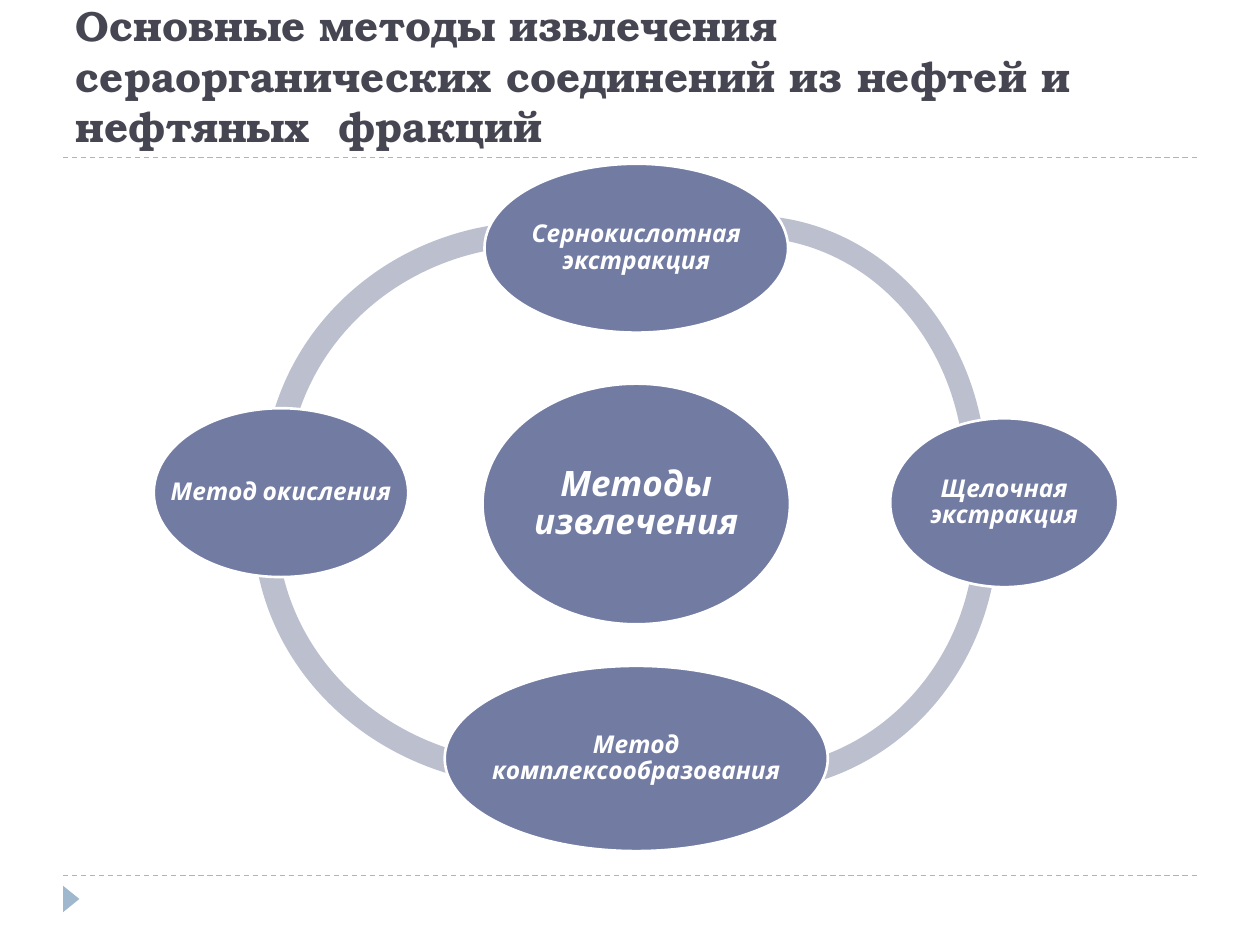
import pptx
import pptx.util
import pptx.dml.color
import pptx.enum.dml
import pptx.enum.shapes
import pptx.enum.text
import pptx.oxml

RGBColor = pptx.dml.color.RGBColor
Shape = pptx.enum.shapes.MSO_SHAPE
Anchor = pptx.enum.text.MSO_ANCHOR
Align = pptx.enum.text.PP_ALIGN

TITLE_COLOR = RGBColor(0x46, 0x46, 0x53)
NODE_COLOR = RGBColor(0x72, 0x7C, 0xA3)
RING_COLOR = RGBColor(0xBC, 0xBF, 0xCE)
ACCENT_COLOR = RGBColor(0x9F, 0xB8, 0xCD)
WHITE = RGBColor(0xFF, 0xFF, 0xFF)

COLUMNS, ROWS = 10, 7.5
TITLE = "Основные методы извлечения сераорганических соединений из нефтей и нефтяных  фракций"

# left, top, width, height in columns and rows; start and end in degrees
RING_ARCS = [
    (2.09, 1.76, 4.35, 4.15, 177.88, 293.02),
    (2.01, 2.09, 4.47, 4.15, 66.53, 187.2),
    (3.99, 2.13, 3.93, 4.15, 353.87, 116.24),
    (4.06, 1.71, 3.77, 4.15, 243.82, 5.67),
]
# text, centre column, centre row, width, height, text size
NODES = [
    ("Методы извлечения", 5.05, 4, 2.44, 1.91, 20),
    ("Сернокислотная экстракция", 5.05, 1.97, 2.41, 1.34, 14),
    ("Щелочная экстракция", 7.97, 3.99, 1.81, 1.34, 14),
    ("Метод комплексообразования", 5.05, 6.02, 3.04, 1.47, 14),
    ("Метод окисления", 2.23, 3.91, 2.02, 1.34, 14),
]


class MethodsSlide:
    """Holds the style and the slide, and draws on a grid of columns and rows."""

    title_font = "TeX Gyre Bonum"
    body_font = "Cabin"

    def __init__(self, presentation):
        self.column = presentation.slide_width / COLUMNS
        self.row = presentation.slide_height / ROWS
        self.slide = presentation.slides.add_slide(presentation.slide_layouts[5])
        self.shapes = self.slide.shapes

    def box(self, left, top, width, height):
        return (round(left * self.column), round(top * self.row),
                round(width * self.column), round(height * self.row))

    def format_text(self, paragraph, name, size, color, italic=False):
        for run in paragraph.runs:
            run.font.name = name
            run.font.size = pptx.util.Pt(size)
            run.font.bold = True
            run.font.italic = italic
            run.font.color.rgb = color

    def title(self, text, *place):
        title = self.shapes.title
        title.left, title.top, title.width, title.height = self.box(*place)
        frame = title.text_frame
        frame.text = text
        frame.word_wrap = True
        frame.auto_size = pptx.enum.text.MSO_AUTO_SIZE.NONE
        frame.vertical_anchor = Anchor.BOTTOM
        frame.paragraphs[0].alignment = Align.LEFT
        self.format_text(frame.paragraphs[0], self.title_font, 24, TITLE_COLOR)

    def rule(self, row):
        """Draw a dashed line between the side margins."""
        left, top, width, _ = self.box(0.5, row, 9, 0)
        line = self.shapes.add_connector(
            pptx.enum.shapes.MSO_CONNECTOR.STRAIGHT, left, top, left + width, top)
        line.line.color.rgb = ACCENT_COLOR
        line.line.width = pptx.util.Pt(0.75)
        line.line.dash_style = pptx.enum.dml.MSO_LINE.DASH
        line._element.spPr.append(pptx.oxml.parse_xml(
            '<a:effectLst xmlns:a="http://schemas.openxmlformats.org/drawingml/2006/main"/>'))

    def filled(self, kind, color, *place):
        shape = self.shapes.add_shape(kind, *self.box(*place))
        shape.shadow.inherit = False
        shape.fill.solid()
        shape.fill.fore_color.rgb = color
        shape.line.fill.background()
        return shape

    def arc(self, left, top, width, height, start, end):
        arc = self.filled(Shape.BLOCK_ARC, RING_COLOR, left, top, width, height)
        # An angle is stored in 1/60000 degree, an adjustment in 1/100000.
        arc.adjustments[0] = start * 0.6
        arc.adjustments[1] = end * 0.6
        arc.adjustments[2] = 0.046

    def node(self, text, column, row, width, height, size):
        """Draw an ellipse with a label that may use its full width."""
        place = column - width / 2, row - height / 2, width, height
        ellipse = self.filled(Shape.OVAL, NODE_COLOR, *place)
        ellipse.line.color.rgb = WHITE
        ellipse.line.width = pptx.util.Pt(1.5)

        frame = self.shapes.add_textbox(*self.box(*place)).text_frame
        frame.text = text
        frame.word_wrap = True
        frame.vertical_anchor = Anchor.MIDDLE
        inset = pptx.util.Inches(0.02)
        frame.margin_left = frame.margin_right = inset
        frame.margin_top = frame.margin_bottom = inset
        paragraph = frame.paragraphs[0]
        paragraph.alignment = Align.CENTER
        paragraph.line_spacing = 0.9
        self.format_text(paragraph, self.body_font, size, WHITE, italic=True)


def main():
    presentation = pptx.Presentation()
    presentation.slide_width = pptx.util.Inches(10)
    presentation.slide_height = pptx.util.Inches(7.5)

    page = MethodsSlide(presentation)
    for row in (6.95, 1.25):
        page.rule(row)
    marker = page.filled(Shape.ISOSCELES_TRIANGLE, ACCENT_COLOR, 0.46, 7.07, 0.21, 0.13)
    marker.rotation = 90
    page.title(TITLE, 0.5, 0.17, 9, 1.08)
    for arc in RING_ARCS:
        page.arc(*arc)
    for node in NODES:
        page.node(*node)

    presentation.save("out.pptx")


if __name__ == "__main__":
    main()
